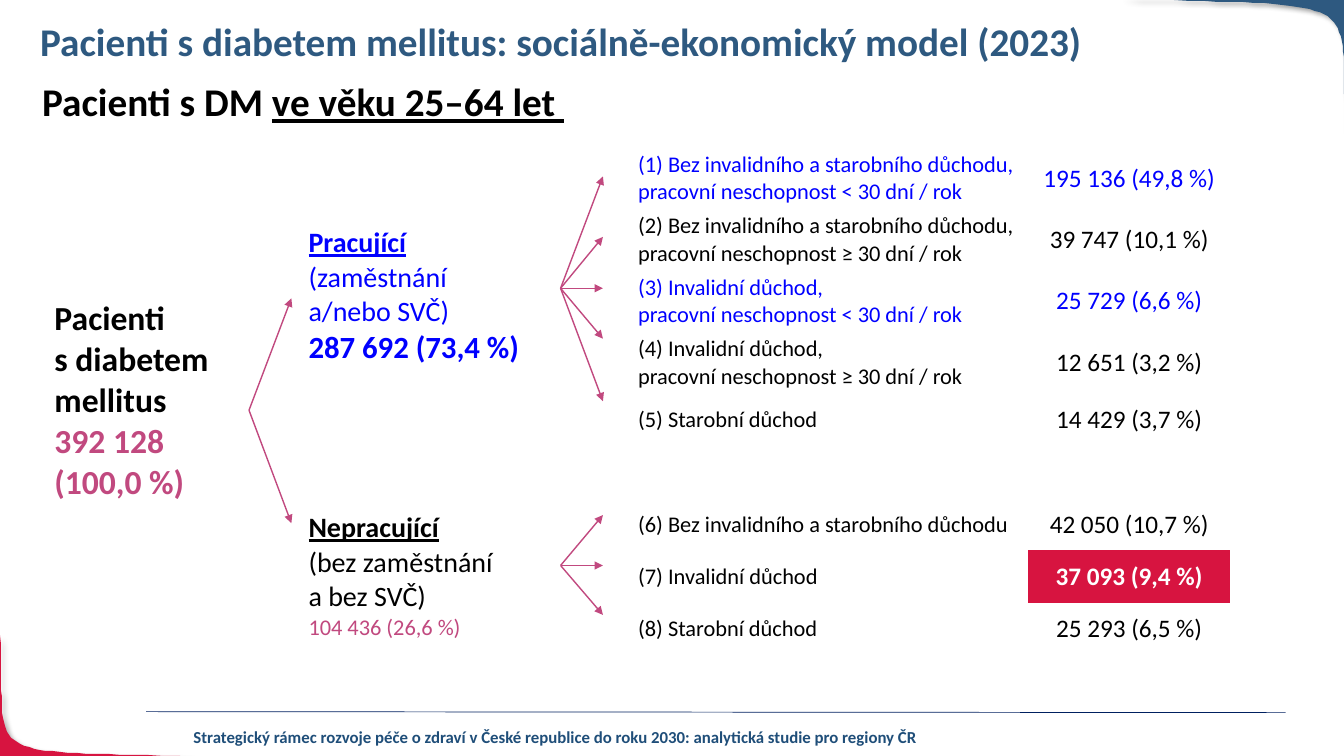
from lxml.etree import SubElement
from pptx import Presentation
from pptx.dml.color import RGBColor
from pptx.enum.shapes import MSO_CONNECTOR
from pptx.enum.text import MSO_ANCHOR, PP_ALIGN
from pptx.oxml.ns import qn
from pptx.util import Pt

PX = 9144  # EMU, one hundredth of an inch
FONT = "Calibri"
NAVY, RED, ROSE = "2E5980", "D71440", "C1497F"
BLUE, BLACK, WHITE = "0000FF", "000000", "FFFFFF"
NO_STYLE = "{2D5ABB26-0587-4C30-8999-92F81FD0307C}"

COLUMNS = [252, 336, 388, 200]
ROWS = [61] * 5 + [52] * 5
# Last row and column of each merged cell, then its lines: text, size, colour, bold, underline
GROUPS = {
    (1, 0): (9, [("Pacienti", 24, BLACK, True, False),
                 ("s\u00a0diabetem", 24, BLACK, True, False),
                 ("mellitus", 24, BLACK, True, False),
                 ("392 128", 24, ROSE, True, False),
                 ("(100,0 %)", 24, ROSE, True, False)]),
    (1, 1): (5, [("Pracující", 20, BLUE, True, True),
                 ("(zaměstnání\va/nebo SVČ)", 20, BLUE, False, False),
                 ("287 692 (73,4 %)", 22, BLUE, True, False)]),
    (7, 1): (9, [("Nepracující", 20, BLACK, True, True),
                 ("(bez zaměstnání\va bez\u00a0SVČ)", 20, BLACK, False, False),
                 ("104 436 (26,6 %)", 16, ROSE, False, False)]),
}
# Row, label, value, colour
CATEGORIES = [
    (1, "(1) Bez invalidního a starobního důchodu, pracovní neschopnost < 30 dní / rok",
     "195 136 (49,8 %)", BLUE),
    (2, "(2) Bez invalidního a starobního důchodu, pracovní neschopnost ≥ 30 dní / rok",
     "39 747 (10,1 %)", BLACK),
    (3, "(3) Invalidní důchod,\vpracovní neschopnost < 30 dní / rok", "25 729 (6,6 %)", BLUE),
    (4, "(4) Invalidní důchod,\vpracovní neschopnost ≥ 30 dní / rok", "12 651 (3,2 %)", BLACK),
    (5, "(5) Starobní důchod", "14 429 (3,7 %)", BLACK),
    (7, "(6) Bez invalidního a starobního důchodu", "42 050 (10,7 %)", BLACK),
    (8, "(7) Invalidní důchod", "37 093 (9,4 %)", BLACK),
    (9, "(8) Starobní důchod", "25 293 (6,5 %)", BLACK),
]
HIGHLIGHTED_ROW = 8


def rgb(code):
    return RGBColor.from_string(code)


def style(para, size, color, bold=False, underline=False):
    font = para.font
    font.name, font.size, font.bold, font.underline = FONT, Pt(size), bold, underline
    font.color.rgb = rgb(color)


def add_text(page, box, size, color, wrap=True):
    """Add an empty bold text box and return its paragraph."""
    frame = page.shapes.add_textbox(*(value * PX for value in box)).text_frame
    frame.word_wrap = wrap
    para = frame.paragraphs[0]
    style(para, size, color, bold=True)
    return para


def add_line(page, start, end, color, width, arrow=False):
    ends = [value * PX for value in (*start, *end)]
    line = page.shapes.add_connector(MSO_CONNECTOR.STRAIGHT, *ends)
    line.line.color.rgb = rgb(color)
    line.line.width = Pt(width)
    if arrow:
        SubElement(line.line._get_or_add_ln(), qn("a:tailEnd"), type="triangle")
    SubElement(line._element.spPr, qn("a:effectLst"))


def add_corner(page, curve, corner, color):
    """Fill the area between a cubic curve and a corner of the page."""
    steps = 40
    points = []
    for step in range(steps + 1):
        t = step / steps
        weights = ((1 - t) ** 3, 3 * t * (1 - t) ** 2, 3 * t * t * (1 - t), t ** 3)
        points.append(tuple(sum(weight * point[axis] for weight, point in zip(weights, curve))
                            for axis in (0, 1)))
    builder = page.shapes.build_freeform(*points[0], scale=PX)
    builder.add_line_segments(points[1:] + [corner], close=True)
    shape = builder.convert_to_shape()
    shape.fill.solid()
    shape.fill.fore_color.rgb = rgb(color)
    shape.line.fill.background()
    effects = SubElement(shape._element.spPr, qn("a:effectLst"))
    shadow = SubElement(effects, qn("a:outerShdw"), blurRad=str(Pt(4)), dist=str(Pt(3)),
                        dir="2700000", algn="tl", rotWithShape="0")
    SubElement(SubElement(shadow, qn("a:srgbClr"), val=BLACK), qn("a:alpha"), val="40000")


def add_frame(page):
    """Place the corners and the footer."""
    add_corner(page, [(213, 751), (-34, 744), (8, 759), (0, 630)], (0, 751), RED)
    add_corner(page, [(1111, -1), (1370, 7), (1326, -10), (1335, 142)], (1335, -1), NAVY)
    add_line(page, (145, 706), (1275, 707), "002060", 0.5)
    footer = add_text(page, (101, 716, 900, 30), 12, "1F4E79")
    footer.alignment = PP_ALIGN.CENTER
    footer.add_run().text = ("Strategický rámec rozvoje péče o zdraví v České republice "
                             "do roku 2030: analytická studie pro regiony ČR")


def add_headings(page):
    title = add_text(page, (30, 18, 1238, 59), 28, NAVY)
    title.line_spacing = 0.9
    title.add_run().text = "Pacienti s diabetem mellitus: sociálně-ekonomický model (2023)"
    subtitle = add_text(page, (32, 72, 545, 57), 28, BLACK, wrap=False)
    subtitle.add_run().text = "Pacienti s DM "
    age = subtitle.add_run()
    age.text = "ve věku 25–64 let "
    age.font.underline = True


def add_fan(page, x, y, tips):
    """Draw arrows from one point to tips at the given heights."""
    for tip in tips:
        add_line(page, (x, y), (x + 42, tip), ROSE, 1, arrow=True)


def fill_cell(cell, text, size, color, bold=False, align=PP_ALIGN.LEFT):
    cell.vertical_anchor = MSO_ANCHOR.MIDDLE
    cell.margin_left = cell.margin_top = cell.margin_right = PX
    cell.margin_bottom = 0
    para = cell.text_frame.paragraphs[0]
    para.text = text
    para.alignment = align
    style(para, size, color, bold)


def add_model_table(page, left, top):
    frame = page.shapes.add_table(len(ROWS), len(COLUMNS), left * PX, top * PX,
                                  sum(COLUMNS) * PX, sum(ROWS) * PX)
    table = frame.table
    table.first_row = table.horz_banding = False
    table._tbl.tblPr.find(qn("a:tableStyleId")).text = NO_STYLE
    for column, width in zip(table.columns, COLUMNS):
        column.width = width * PX
    for row, height in zip(table.rows, ROWS):
        row.height = height * PX
    for cell in table.iter_cells():
        cell.fill.background()

    for (row, column), (last_row, lines) in GROUPS.items():
        cell = table.cell(row, column)
        cell.merge(table.cell(last_row, column))
        cell.vertical_anchor = MSO_ANCHOR.MIDDLE
        for index, (text, *look) in enumerate(lines):
            text_frame = cell.text_frame
            para = text_frame.add_paragraph() if index else text_frame.paragraphs[0]
            para.text = text
            style(para, *look)

    for row, label, value, color in CATEGORIES:
        fill_cell(table.cell(row, 2), label, 16, color)
        value_cell = table.cell(row, 3)
        marked = row == HIGHLIGHTED_ROW
        fill_cell(value_cell, value, 18, WHITE if marked else color, marked, PP_ALIGN.CENTER)
        if marked:
            value_cell.fill.solid()
            value_cell.fill.fore_color.rgb = rgb(RED)


def main():
    deck = Presentation()
    deck.slide_width, deck.slide_height = 1333 * PX, 750 * PX
    page = deck.slides.add_slide(deck.slide_layouts[6])
    add_frame(page)
    add_headings(page)
    add_fan(page, 247, 407, [296, 519])
    add_fan(page, 556, 286, [175, 235, 286, 336, 398])
    add_fan(page, 556, 561, [511, 561, 610])
    add_model_table(page, 44, 85)
    deck.save("out.pptx")


if __name__ == "__main__":
    main()
